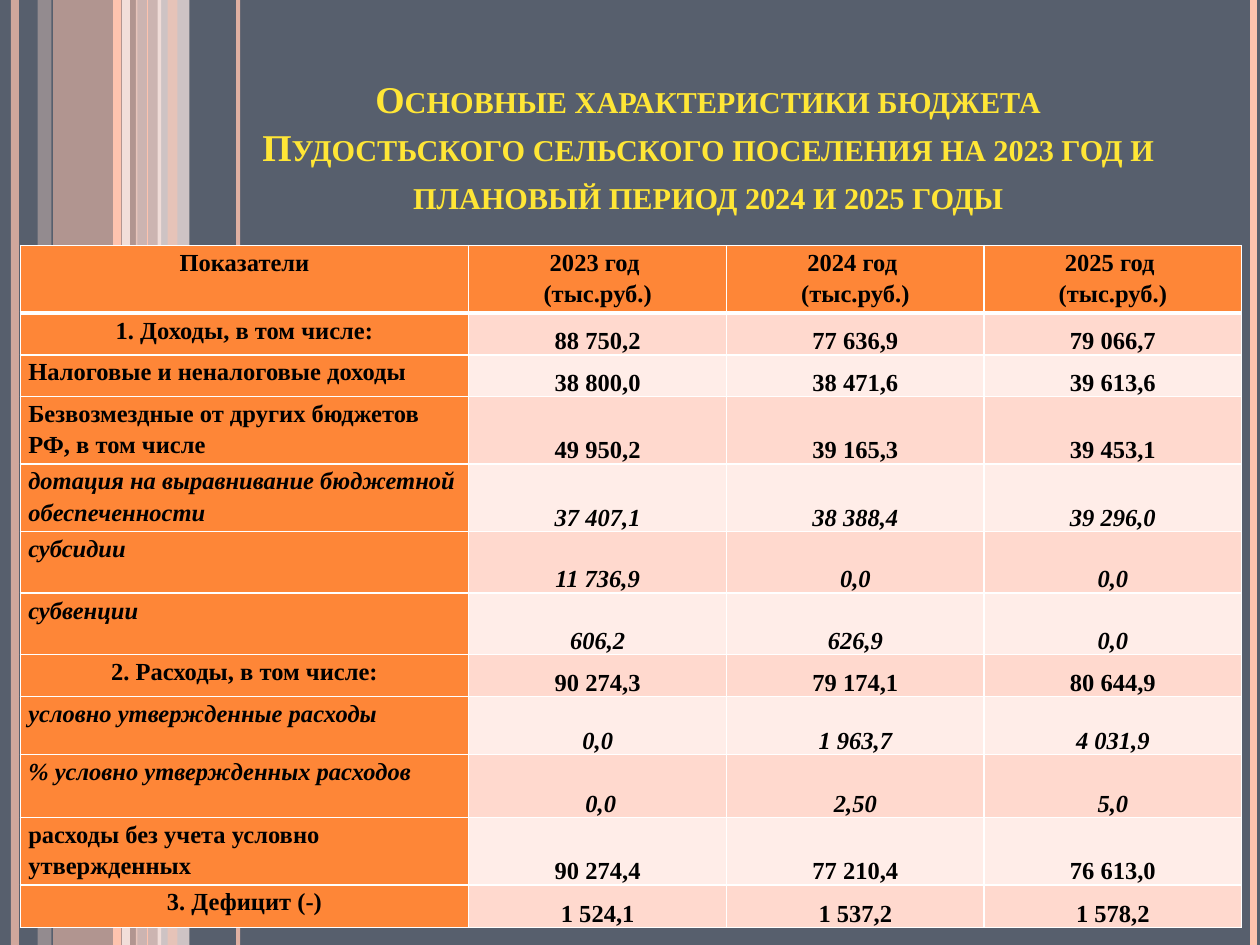
from dataclasses import dataclass

from lxml.etree import SubElement
from pptx import Presentation
from pptx.dml.color import RGBColor
from pptx.enum.shapes import MSO_CONNECTOR, MSO_SHAPE
from pptx.enum.text import MSO_ANCHOR, PP_ALIGN
from pptx.oxml.ns import qn
from pptx.util import Cm, Pt


@dataclass(frozen=True)
class Theme:
    background: str = "575F6D"
    orange: str = "FE8637"
    peach: str = "FEC3AE"
    light: str = "FFD9CE"
    pale: str = "FFEDE8"
    white: str = "FFFFFF"
    title: str = "FFE636"
    text: str = "000000"
    font: str = "Times New Roman"
    title_size: float = 21.6
    table_size: float = 14


theme = Theme()


def paint(fill, color, opacity=100):
    """Solid fill with an opacity in percent."""
    fill.solid()
    fill.fore_color.rgb = RGBColor.from_string(color)
    if opacity < 100:
        color_node = next(fill._xPr.iter(qn("a:srgbClr")))
        SubElement(color_node, qn("a:alpha"), val=str(opacity * 1000))


def style_span(span, size, color, italic=False):
    span.font.name = theme.font
    span.font.size = Pt(size)
    span.font.bold = True
    span.font.italic = italic
    span.font.color.rgb = RGBColor.from_string(color)


deck = Presentation()
deck.slide_width, deck.slide_height = Cm(25.4), Cm(19.05)
page = deck.slides.add_slide(deck.slide_layouts[6])
paint(page.background.fill, theme.background)

# Vertical bands: left, width, colour, opacity
bands = [
    (1.07, 1.7, theme.peach, 54),
    (0.76, 0.28, theme.light, 36),
    (2.74, 0.51, theme.light, 70),
    (3.18, 0.64, theme.pale, 71),
    (3.38, 0.2, theme.peach, 51),
]
for left, width, color, opacity in bands:
    band = page.shapes.add_shape(
        MSO_SHAPE.RECTANGLE, Cm(left), 0, Cm(width), deck.slide_height)
    band.shadow.inherit = False
    band.line.fill.background()
    paint(band.fill, color, opacity)

# Vertical lines: position, colour, weight, opacity
stripes = [
    (0.3, theme.peach, 4.5, 73),
    (2.54, theme.pale, 4.5, 83),
    (2.36, theme.peach, 4.5, 100),
    (4.8, theme.peach, 2.25, 82),
    (2.97, theme.peach, 0.75, 100),
    (25.27, theme.peach, 4.5, 100),
]
for left, color, weight, opacity in stripes:
    stripe = page.shapes.add_connector(
        MSO_CONNECTOR.STRAIGHT, Cm(left), 0, Cm(left), deck.slide_height)
    stripe.line.width = Pt(weight)
    paint(stripe.line.fill, color, opacity)
    SubElement(stripe._element.spPr, qn("a:effectLst"))

# Title
box = page.shapes.add_textbox(Cm(4.9), Cm(3), Cm(18.75), Cm(1.5))
box.text_frame.word_wrap = True
box.text_frame.vertical_anchor = MSO_ANCHOR.BOTTOM
para = box.text_frame.paragraphs[0]
para.text = ("Основные характеристики бюджета Пудостьского сельского поселения "
             "на 2023 год и плановый период 2024 и 2025 годы")
para.alignment = PP_ALIGN.CENTER
para.line_spacing = 1.06
for span in para.runs:
    style_span(span, theme.title_size, theme.title)
    span.font._element.set("cap", "small")

# Budget table: row height, label centred, italic, cell texts
years = [f"{year} год \n(тыс.руб.)" for year in (2023, 2024, 2025)]
rows = [
    (1.04, True, False, ["Показатели", *years]),
    (0.84, True, False, ["1. Доходы, в том числе:", "88 750,2", "77 636,9", "79 066,7"]),
    (0.84, False, False, ["Налоговые и неналоговые доходы", "38 800,0", "38 471,6", "39 613,6"]),
    (0.84, False, False, ["Безвозмездные от других бюджетов РФ, в том числе",
                          "49 950,2", "39 165,3", "39 453,1"]),
    (1.32, False, True, ["дотация на выравнивание бюджетной обеспеченности",
                         "37 407,1", "38 388,4", "39 296,0"]),
    (1.24, False, True, ["субсидии", "11 736,9", "0,0", "0,0"]),
    (1.24, False, True, ["субвенции", "606,2", "626,9", "0,0"]),
    (0.84, True, False, ["2. Расходы, в том числе:", "90 274,3", "79 174,1", "80 644,9"]),
    (1.17, False, True, ["условно утвержденные расходы", "0,0", "1 963,7", "4 031,9"]),
    (1.27, False, True, ["% условно утвержденных расходов", " 0,0", "2,50", "5,0"]),
    (1.24, False, False, ["расходы без учета условно утвержденных",
                          "90 274,4", "77 210,4", "76 613,0"]),
    (0.86, True, False, ["3. Дефицит (-)", "1 524,1", "1 537,2", "1 578,2"]),
]
column_widths = [9.04, 5.2, 5.19, 5.19]
table = page.shapes.add_table(
    len(rows), len(column_widths), Cm(0.41), Cm(4.95),
    Cm(sum(column_widths)), Cm(sum(row[0] for row in rows))).table
for column, width in zip(table.columns, column_widths):
    column.width = Cm(width)

for row_index, (height, label_centred, italic, texts) in enumerate(rows):
    table.rows[row_index].height = Cm(height)
    for column_index, text in enumerate(texts):
        cell = table.cell(row_index, column_index)
        is_value = row_index > 0 and column_index > 0
        cell.margin_left = cell.margin_right = Cm(0.16)
        cell.margin_top = cell.margin_bottom = 0
        cell.vertical_anchor = MSO_ANCHOR.BOTTOM if is_value else MSO_ANCHOR.TOP

        # Text
        cell.text_frame.text = text
        centred = label_centred or column_index > 0
        for para in cell.text_frame.paragraphs:
            para.alignment = PP_ALIGN.CENTER if centred else PP_ALIGN.LEFT
            para.line_spacing = 1.15
            for span in para.runs:
                style_span(span, theme.table_size, theme.text, italic)

        # Borders go before the fill in the cell properties
        properties = cell._tc.get_or_add_tcPr()
        for side in ("L", "R", "T", "B"):
            header_edge = (row_index, side) in ((0, "B"), (1, "T"))
            border = SubElement(properties, qn(f"a:ln{side}"),
                                w=str(Pt(3 if header_edge else 1)))
            border_fill = SubElement(border, qn("a:solidFill"))
            SubElement(border_fill, qn("a:srgbClr"), val=theme.white)
        value_color = theme.light if row_index % 2 else theme.pale
        paint(cell.fill, value_color if is_value else theme.orange)

deck.save("out.pptx")
